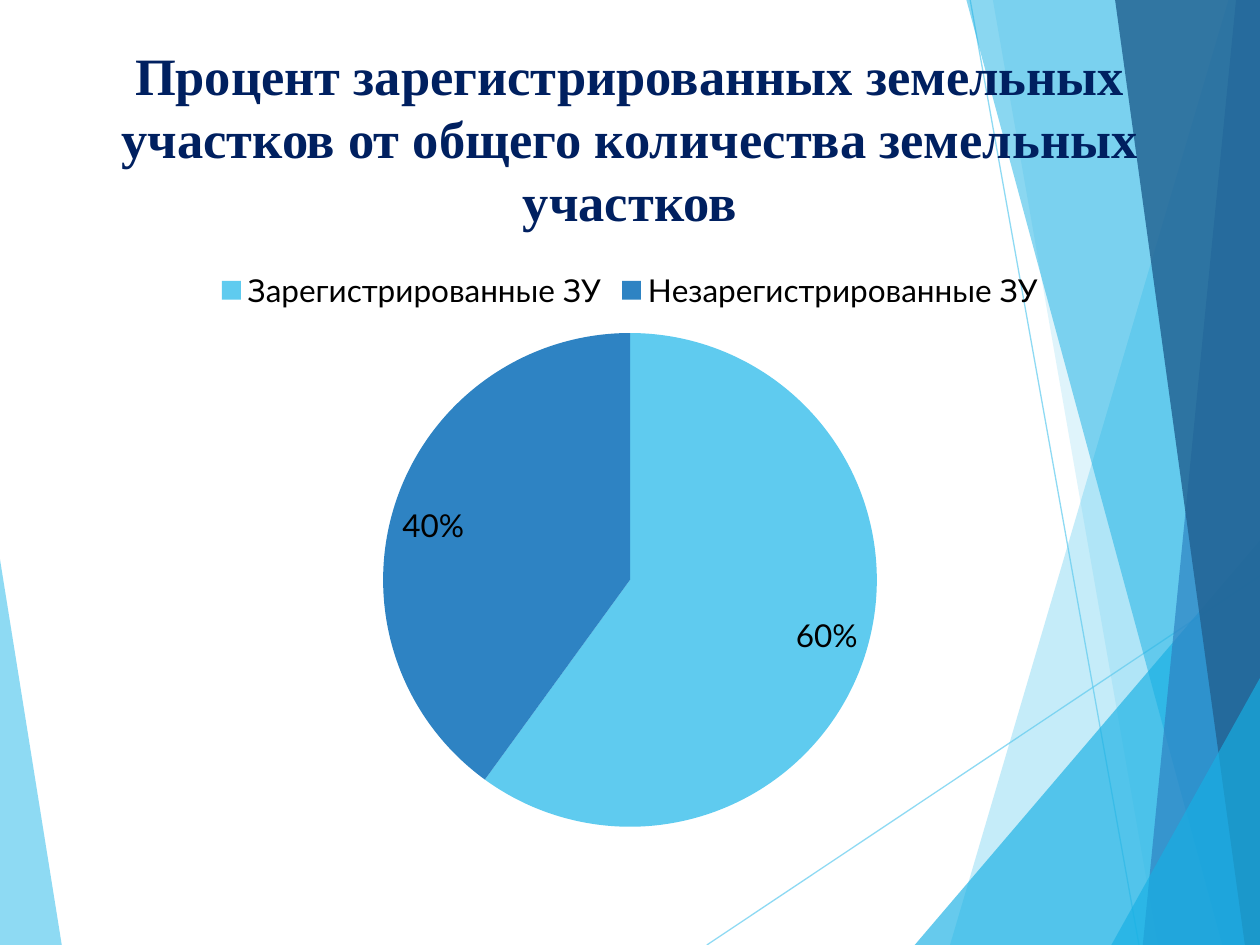
from lxml import etree
from pptx import Presentation
from pptx.chart.data import CategoryChartData
from pptx.dml.color import RGBColor
from pptx.enum.chart import XL_CHART_TYPE, XL_LABEL_POSITION, XL_LEGEND_POSITION
from pptx.enum.shapes import MSO_CONNECTOR
from pptx.enum.text import MSO_ANCHOR, MSO_AUTO_SIZE, PP_ALIGN
from pptx.oxml.ns import qn
from pptx.util import Inches, Pt

PIE = XL_CHART_TYPE.PIE
INSIDE = XL_LABEL_POSITION.INSIDE_END
TOP = XL_LEGEND_POSITION.TOP
STRAIGHT = MSO_CONNECTOR.STRAIGHT
MIDDLE = MSO_ANCHOR.MIDDLE
CENTER = PP_ALIGN.CENTER

COLORS = {
    "sky": "5FCBEF",
    "cyan": "17B0E4",
    "blue": "2E83C3",
    "deep": "226292",
    "navy": "002060",
    "black": "000000",
}
WIDE, HIGH = 10, 7.5

# Colour, opacity in percent, corners in inches
WEDGE = ("sky", 70, [(0, 4.44), (0.49, HIGH), (0, HIGH)])
FACETS = [
    ("sky", 36, [(9.75, 0), (7.54, HIGH), (WIDE, HIGH), (WIDE, 0)]),
    ("sky", 20, [(7.88, 0), (9.19, HIGH), (WIDE, HIGH), (WIDE, 0)]),
    ("cyan", 66, [(7.26, HIGH), (WIDE, 4.29), (WIDE, HIGH)]),
    ("cyan", 50, [(7.67, 0), (9.7, HIGH), (WIDE, HIGH), (WIDE, 0)]),
    ("blue", 70, [(9.81, 0), (9.07, HIGH), (WIDE, HIGH), (WIDE, 0)]),
    ("deep", 82, [(8.85, 0), (9.88, HIGH), (WIDE, HIGH), (WIDE, 0)]),
    ("cyan", 66, [(8.82, HIGH), (WIDE, 5.38), (WIDE, HIGH)]),
]
RAYS = [((5.61, HIGH), (WIDE, 4.57)), ((7.7, 0), (9.04, HIGH))]


def rgb(name):
    return RGBColor.from_string(COLORS[name])


def fade(shape, alpha):
    """Set the opacity, in percent, of the shape's first colour."""
    color = next(shape.element.spPr.iter(qn("a:srgbClr")))
    etree.SubElement(color, qn("a:alpha"), val=str(alpha * 1000))


def add_facet(slide, color, alpha, points):
    grid = [(round(x * 100), round(y * 100)) for x, y in points]
    pen = slide.shapes.build_freeform(*grid[0], scale=Inches(0.01))
    pen.add_line_segments(grid[1:], close=True)
    facet = pen.convert_to_shape()
    facet.shadow.inherit = False
    facet.fill.solid()
    facet.fill.fore_color.rgb = rgb(color)
    facet.line.fill.background()
    fade(facet, alpha)


def add_ray(slide, start, end):
    ends = [Inches(v) for v in (*start, *end)]
    ray = slide.shapes.add_connector(STRAIGHT, *ends)
    ray.line.color.rgb = rgb("sky")
    ray.line.width = Pt(0.75)
    fade(ray, 70)
    etree.SubElement(ray.element.spPr, qn("a:effectLst"))


def set_title(slide, text):
    title = slide.shapes.title
    title.left, title.top = Inches(0.31), Inches(0.23)
    title.width, title.height = Inches(9.38), Inches(1.72)
    frame = title.text_frame
    frame.text = text
    frame.word_wrap = True
    frame.auto_size = MSO_AUTO_SIZE.NONE
    frame.vertical_anchor = MIDDLE
    para = frame.paragraphs[0]
    para.alignment = CENTER
    font = para.font
    font.name, font.size, font.bold = "Times New Roman", Pt(30), True
    font.color.rgb = rgb("navy")
    # Bring the title in front of the facets
    slide.shapes.element.append(title.element)


def add_pie(slide, shares, colors):
    data = CategoryChartData()
    data.categories = list(shares)
    data.add_series("Series 1", list(shares.values()))
    chart = slide.shapes.add_chart(
        PIE, Inches(0.5), Inches(2.03), Inches(9), Inches(4.67), data
    ).chart
    chart.font.name, chart.font.size = "Lato", Pt(18)
    chart.font.color.rgb = rgb("black")
    chart.has_title = False
    chart.has_legend = True
    chart.legend.position = TOP
    chart.legend.include_in_layout = False

    plot = chart.plots[0]
    plot.vary_by_categories = True
    for i, color in enumerate(colors):
        fill = plot.series[0].points[i].format.fill
        fill.solid()
        fill.fore_color.rgb = rgb(color)
    plot.has_data_labels = True
    labels = plot.data_labels
    labels.show_value = False
    labels.show_percentage = True
    labels.number_format, labels.number_format_is_linked = "0%", False
    labels.position = INSIDE


def main():
    deck = Presentation()
    deck.slide_width, deck.slide_height = Inches(WIDE), Inches(HIGH)
    slide = deck.slides.add_slide(deck.slide_layouts[5])
    add_facet(slide, *WEDGE)
    for ray in RAYS:
        add_ray(slide, *ray)
    for facet in FACETS:
        add_facet(slide, *facet)
    set_title(
        slide,
        "Процент зарегистрированных земельных участков "
        "от общего количества земельных участков",
    )
    shares = {"Зарегистрированные ЗУ": 60, "Незарегистрированные ЗУ": 40}
    add_pie(slide, shares, ["sky", "blue"])
    deck.save("out.pptx")


if __name__ == "__main__":
    main()
